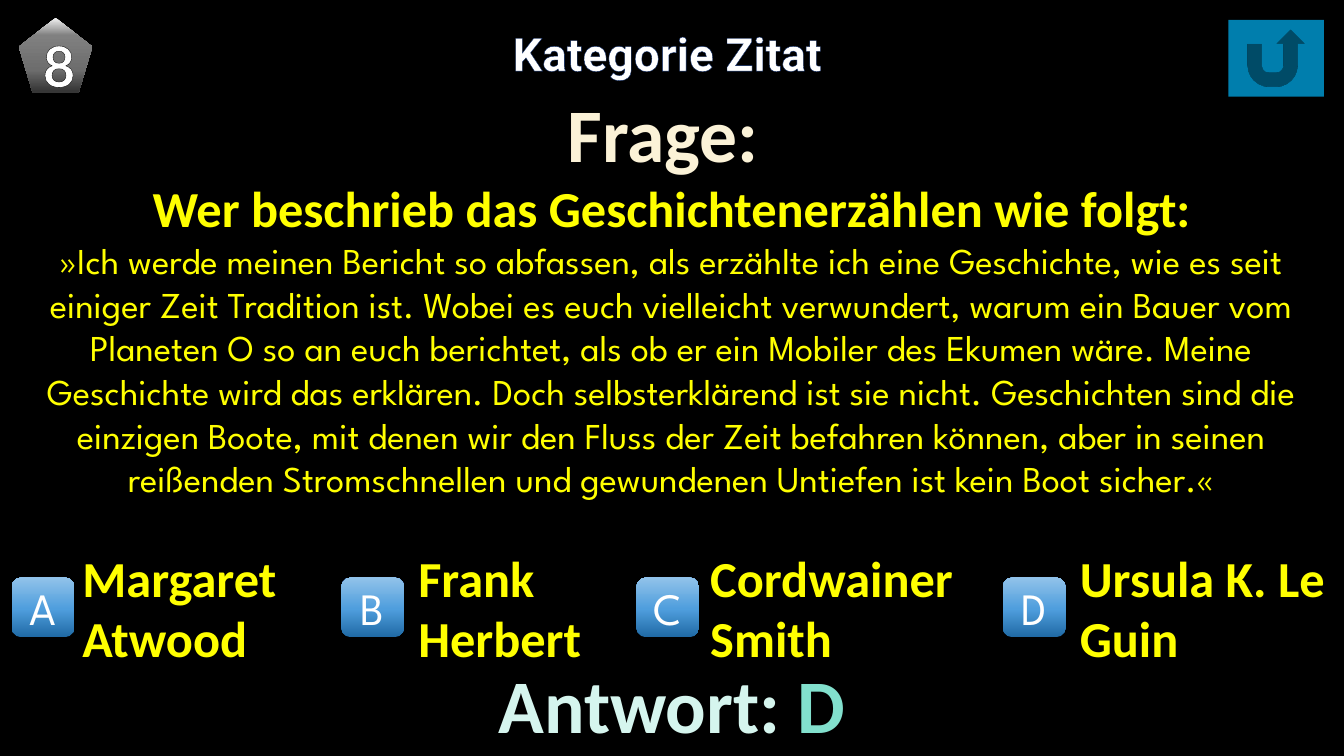
"""Builds the quiz slide for question 8 in the category Zitat."""
from lxml import etree
from pptx import Presentation, util as u
from pptx.dml.color import RGBColor
from pptx.enum import shapes, text
from pptx.oxml import parse_xml
from pptx.oxml.ns import nsdecls, qn

PX = 9525
COLORS = {
    "black": "000000", "white": "FFFFFF", "navy": "002060", "cream": "FBF2D7",
    "yellow": "FFFF00", "mint": "D5F5EE", "teal": "82E0CD", "sky": "00B0F0",
}
GREYS = [(0, "F2F2F2"), (23, "808080"), (69, "6D6D6D"), (97, "363636")]
BLUES = [(0, "206AA5"), (48, "4F9EDD"), (100, "92C3EA")]

deck = Presentation()
deck.slide_width, deck.slide_height = 1280 * PX, 720 * PX
page = deck.slides.add_slide(deck.slide_layouts[6])
page.background.fill.solid()
page.background.fill.fore_color.rgb = RGBColor.from_string(COLORS["black"])


def add_item(kind, left, top, width, height, stops=None, angle=0):
    """Adds a text box, or a preset shape with an optional gradient."""
    place = [n * PX for n in (left, top, width, height)]
    if kind is None:
        item = page.shapes.add_textbox(*place)
    else:
        item = page.shapes.add_shape(kind, *place)
        item.shadow.inherit = False
        item.line.fill.background()
        item.text_frame.vertical_anchor = text.MSO_ANCHOR.MIDDLE
    item.text_frame.word_wrap = True
    if stops:
        marks = "".join(f'<a:gs pos="{pos * 1000}"><a:srgbClr val="{color}"/></a:gs>'
                        for pos, color in stops)
        fill = parse_xml(f'<a:gradFill {nsdecls("a")} rotWithShape="1"><a:gsLst>{marks}</a:gsLst>'
                         f'<a:lin ang="{angle * 60000}" scaled="0"/></a:gradFill>')
        item.element.spPr.find(qn("a:prstGeom")).addnext(fill)
    return item


def add_span(para, words, size, font, color, bold=True, outline=None, align="CENTER"):
    """Adds one run and aligns its paragraph."""
    para.alignment = getattr(text.PP_ALIGN, align)
    span = para.add_run()
    span.text = words
    span.font.size, span.font.name, span.font.bold = u.Pt(size), font, bold
    span.font.color.rgb = RGBColor.from_string(COLORS[color])
    if outline:
        edge, points = outline
        span.font._element.insert(0, parse_xml(
            f'<a:ln {nsdecls("a")} w="{u.Pt(points)}"><a:solidFill>'
            f'<a:srgbClr val="{COLORS[edge]}"/></a:solidFill></a:ln>'))


title = add_item(None, 26, 19, 1219, 63)
add_span(title.text_frame.paragraphs[0], "Kategorie Zitat", 33, "Roboto", "white",
         outline=("navy", 0.52))

question = add_item(None, 0, 78, 1280, 449).text_frame
para = question.paragraphs[0]
add_span(para, "Frage: ", 54, "Calibri", "cream")
para = question.add_paragraph()
add_span(para, "Wer beschrieb das Geschichtenerzählen wie folgt:", 36, "Calibri", "yellow")
para.add_line_break()
add_span(para, "»Ich werde meinen Bericht so abfassen, als erzählte ich eine Geschichte, "
         "wie es seit einiger Zeit Tradition ist. Wobei es euch vielleicht verwundert, "
         "warum ein Bauer vom Planeten O so an euch berichtet, als ob er ein Mobiler des "
         "Ekumen wäre. Meine Geschichte wird das erklären. Doch selbsterklärend ist sie "
         "nicht. Geschichten sind die einzigen Boote, mit denen wir den Fluss der Zeit "
         "befahren können, aber in seinen reißenden Stromschnellen und gewundenen "
         "Untiefen ist kein Boot sicher.«", 26, "League Spartan", "yellow", bold=False)

para = add_item(None, 0, 622, 1280, 97).text_frame.paragraphs[0]
add_span(para, "Antwort: ", 54, "Calibri", "mint")
add_span(para, "D", 54, "Calibri", "teal")

back = add_item(shapes.MSO_SHAPE.ACTION_BUTTON_RETURN, 1170, 19, 91, 73)
back.fill.solid()
back.fill.fore_color.rgb = RGBColor.from_string(COLORS["sky"])
tint = back.element.spPr.find(qn("a:solidFill"))[0]
etree.SubElement(tint, qn("a:alpha"), val="72000")
back.element.spPr.find(qn("a:effectLst")).append(parse_xml(
    f'<a:outerShdw {nsdecls("a")} blurRad="{u.Pt(4.5)}" dist="{u.Pt(1.5)}" dir="5400000" '
    f'rotWithShape="0"><a:srgbClr val="{COLORS["black"]}"><a:alpha val="48000"/>'
    '</a:srgbClr></a:outerShdw>'))

number = add_item(shapes.MSO_SHAPE.REGULAR_PENTAGON, 18, 17, 70, 72, GREYS, 90)
add_span(number.text_frame.paragraphs[0], "8", 40, "Lato", "white", outline=("black", 1.06))

answers = [
    ("A", 11, "Margaret Atwood", 69, 255),
    ("B", 325, "Frank Herbert", 389, 208),
    ("C", 606, "Cordwainer Smith", 667, 284),
    ("D", 955, "Ursula K. Le Guin", 1019, 259),
]
for letter, button_left, name, name_left, name_width in answers:
    button = add_item(shapes.MSO_SHAPE.ROUNDED_RECTANGLE, button_left, 550, 60, 57, BLUES, 270)
    add_span(button.text_frame.paragraphs[0], letter, 32, "League Spartan", "white", bold=False)
    para = add_item(None, name_left, 516, name_width, 126).text_frame.paragraphs[0]
    para.space_after = u.Pt(18)
    add_span(para, name, 36, "Calibri", "yellow", align="LEFT")

deck.save("out.pptx")
